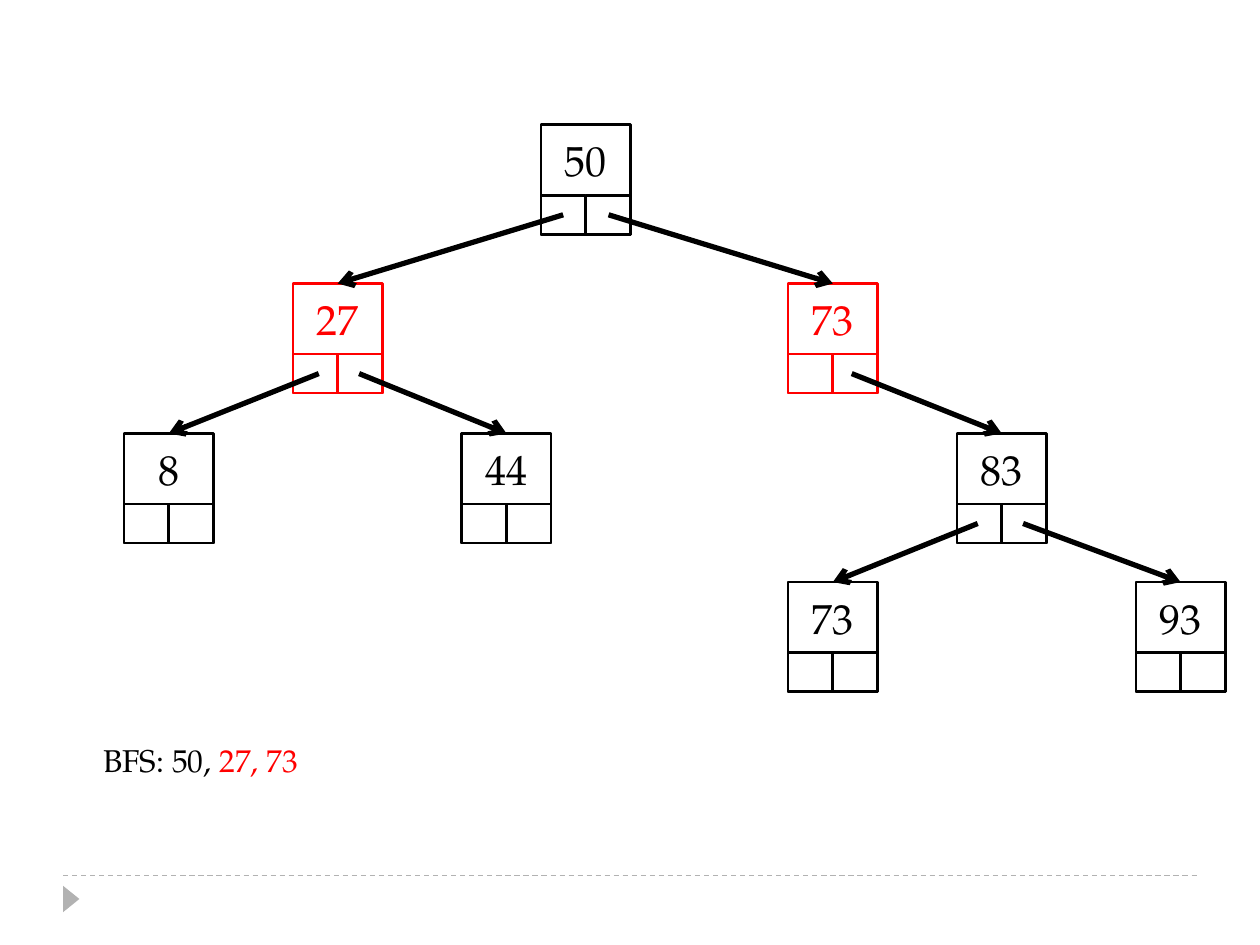
import pptx
import pptx.util
import pptx.dml.color
import pptx.enum.dml
import pptx.enum.shapes
import pptx.enum.text
import pptx.oxml
import pptx.oxml.ns
from dataclasses import dataclass
from lxml import etree

Inches, Pt = pptx.util.Inches, pptx.util.Pt
RGB = pptx.dml.color.RGBColor
SHAPE = pptx.enum.shapes.MSO_SHAPE


@dataclass(frozen=True)
class Theme:
    font: str = "TeX Gyre Pagella"
    ink: RGB = RGB(0, 0, 0)
    visited: RGB = RGB(255, 0, 0)
    rule: RGB = RGB(0xB2, 0xB2, 0xB2)
    key_size: int = 24
    note_size: int = 18
    border: float = 1.5
    arrow: float = 3


THEME = Theme()
SLIDE_W, SLIDE_H = 10, 7.5

# Node proportions: a key above two equal child cells
NODE_W, NODE_H = 0.71, 0.87
CELL_W, CELL_H = NODE_W / 2, 0.31
LEVEL_TOPS = (0.99, 2.25, 3.44, 4.62)

# name: (key, level, centre x, newly visited)
NODES = {
    "root": ("50", 0, 4.65, False),
    "left": ("27", 1, 2.68, True),
    "right": ("73", 1, 6.61, True),
    "left_left": ("8", 2, 1.34, False),
    "left_right": ("44", 2, 4.02, False),
    "right_right": ("83", 2, 7.95, False),
    "inner_leaf": ("73", 3, 6.61, False),
    "outer_leaf": ("93", 3, 9.37, False),
}

# parent, child, start of the arrow relative to the parent's centre
LINKS = (
    ("root", "left", -0.18),
    ("root", "right", 0.18),
    ("left", "left_left", -0.15),
    ("left", "left_right", 0.17),
    ("right", "right_right", 0.15),
    ("right_right", "inner_leaf", -0.19),
    ("right_right", "outer_leaf", 0.17),
)


def style_run(r, size, color):
    r.font.name, r.font.size = THEME.font, Pt(size)
    r.font.color.rgb = color


def add_outline(s, x, y, w, h, color):
    box = s.shapes.add_shape(SHAPE.RECTANGLE, Inches(x), Inches(y), Inches(w), Inches(h))
    box.shadow.inherit = False
    box.fill.background()
    box.line.color.rgb = color
    box.line.width = Pt(THEME.border)
    return box


def add_line(s, x1, y1, x2, y2, color, width):
    line = s.shapes.add_connector(pptx.enum.shapes.MSO_CONNECTOR.STRAIGHT,
                                  Inches(x1), Inches(y1), Inches(x2), Inches(y2))
    line.line.color.rgb = color
    line.line.width = Pt(width)
    etree.SubElement(line._element.spPr, pptx.oxml.ns.qn("a:effectLst"))
    return line


def add_node(s, x, y, key, color):
    """Draw a tree node and return its outer box."""
    box = add_outline(s, x, y, NODE_W, NODE_H, color)
    tf = box.text_frame
    tf.margin_bottom = Inches(CELL_H + 0.05)  # keeps the key above the cells
    tf.vertical_anchor = pptx.enum.text.MSO_ANCHOR.MIDDLE
    tf.text = key
    p = tf.paragraphs[0]
    p.alignment = pptx.enum.text.PP_ALIGN.CENTER
    style_run(p.runs[0], THEME.key_size, color)
    for col in range(2):
        add_outline(s, x + col * CELL_W, y + NODE_H - CELL_H, CELL_W, CELL_H, color)
    return box


def add_tree(s):
    boxes = {}
    for name, (key, level, cx, visited) in NODES.items():
        color = THEME.visited if visited else THEME.ink
        boxes[name] = add_node(s, cx - NODE_W / 2, LEVEL_TOPS[level], key, color)

    # Arrows from a child cell to the top of the child
    for parent, child, dx in LINKS:
        _, level, cx, _ = NODES[parent]
        _, child_level, child_cx, _ = NODES[child]
        line = add_line(s, cx + dx, LEVEL_TOPS[level] + NODE_H - CELL_H / 2,
                        child_cx, LEVEL_TOPS[child_level], THEME.ink, THEME.arrow)
        line.end_connect(boxes[child], 0)
        ln = line.line._get_or_add_ln()
        etree.SubElement(ln, pptx.oxml.ns.qn("a:tailEnd"), type="arrow")


def add_visit_order(s, x, y, w, h):
    tb = s.shapes.add_textbox(Inches(x), Inches(y), Inches(w), Inches(h))
    tf = tb.text_frame
    tf.word_wrap = False
    tf.auto_size = pptx.enum.text.MSO_AUTO_SIZE.SHAPE_TO_FIT_TEXT
    p = tf.paragraphs[0]
    for text, color in (("BFS: 50,", THEME.ink), (" 27, 73", THEME.visited)):
        r = p.add_run()
        r.text = text
        style_run(r, THEME.note_size, color)


def add_footer(s, x, y, w):
    """Dashed rule with a small right-pointing marker below it."""
    rule = add_line(s, x, y, x + w, y, THEME.rule, 0.75)
    rule.line.dash_style = pptx.enum.dml.MSO_LINE.DASH
    marker = s.shapes.add_shape(SHAPE.ISOSCELES_TRIANGLE, Inches(x - 0.04),
                                Inches(y + 0.12), Inches(0.21), Inches(0.13))
    marker.rotation = 90
    marker.shadow.inherit = False
    marker.fill.solid()
    marker.fill.fore_color.rgb = THEME.rule
    marker.line.fill.background()


def main():
    prs = pptx.Presentation()
    prs.slide_width, prs.slide_height = Inches(SLIDE_W), Inches(SLIDE_H)
    s = prs.slides.add_slide(prs.slide_layouts[6])
    add_footer(s, 0.05 * SLIDE_W, 6.95, 0.9 * SLIDE_W)
    add_tree(s)
    add_visit_order(s, 0.72, 5.83, 1.8, 0.4)
    prs.save("out.pptx")


if __name__ == "__main__":
    main()
